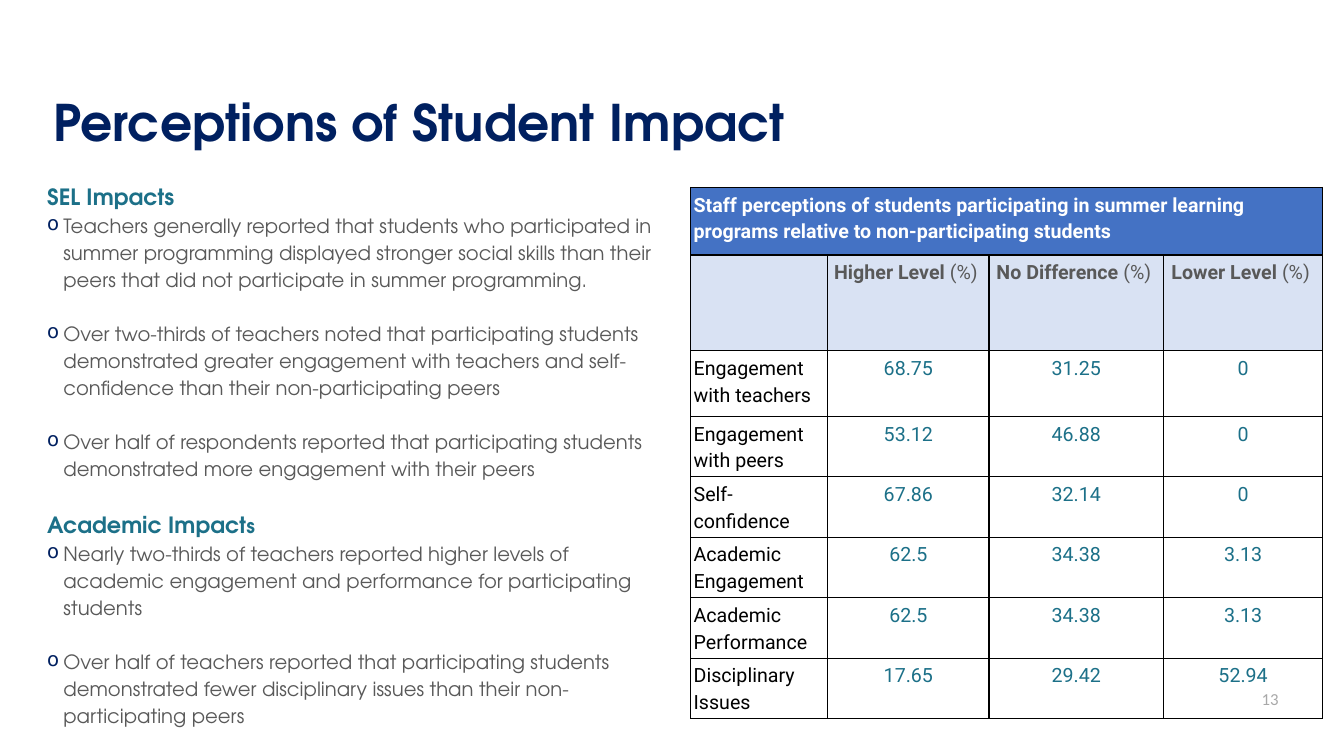
from lxml import etree
from pptx import Presentation
from pptx import util as u
from pptx.dml.color import RGBColor
from pptx.enum import text
from pptx.oxml import ns

NAVY = RGBColor(0x00, 0x20, 0x60)
TEAL = RGBColor(0x1C, 0x70, 0x88)
GREY = RGBColor(0x59, 0x59, 0x59)
PALE_GREY = RGBColor(0xA8, 0xA8, 0xA8)
BLUE = RGBColor(0x44, 0x72, 0xC4)
PALE_BLUE = RGBColor(0xD9, 0xE2, 0xF3)
WHITE = RGBColor(0xFF, 0xFF, 0xFF)
BLACK = RGBColor(0x00, 0x00, 0x00)

HEADING = "TeX Gyre Adventor"
TABLE = "Roboto"
CENTER = text.PP_ALIGN.CENTER

SECTIONS = [
    ([("SEL Impacts", 16)], [
        "Teachers generally reported that students who participated in summer programming "
        "displayed stronger social skills than their peers that did not participate in "
        "summer programming.",
        "Over two-thirds of teachers noted that participating students demonstrated greater "
        "engagement with teachers and self-confidence than their non-participating peers",
        "Over half of respondents reported that participating students demonstrated more "
        "engagement with their peers",
    ]),
    ([("Academic Impact", 16), ("s", 14)], [
        "Nearly two-thirds of teachers reported higher levels of academic engagement and "
        "performance for participating students",
        "Over half of teachers reported that participating students demonstrated fewer "
        "disciplinary issues than their non-participating peers",
    ]),
]

TABLE_TITLE = ("Staff perceptions of students participating in summer learning programs "
               "relative to non-participating students")
LEVELS = ["Higher Level ", "No Difference ", "Lower Level "]
RATINGS = [
    ("Engagement with teachers", "68.75", "31.25", "0"),
    ("Engagement with peers", "53.12", "46.88", "0"),
    ("Self-confidence", "67.86", "32.14", "0"),
    ("Academic Engagement", "62.5", "34.38", "3.13"),
    ("Academic Performance", "62.5", "34.38", "3.13"),
    ("Disciplinary Issues", "17.65", "29.42", "52.94"),
]
COLUMNS = [136, 160, 173, 158]
ROWS = [67, 95, 65] + [60] * 5


def px(n):
    """Turn px, at 100 to the inch, into EMU."""
    return u.Emu(n * 9144)


def sub(parent, tag, **attrs):
    """Append a DrawingML child element."""
    return etree.SubElement(parent, ns.qn(tag), attrs)


class Deck:
    """Holds the presentation, the current slide and its text style."""

    def __init__(self, width, height):
        """Start a deck with one blank slide."""
        self.prs = Presentation()
        self.prs.slide_width, self.prs.slide_height = px(width), px(height)
        self.s = self.prs.slides.add_slide(self.prs.slide_layouts[6])

    def run(self, p, words, size, color, font, bold=False):
        """Add one styled run."""
        r = p.add_run()
        r.text = words
        r.font.size, r.font.name, r.font.bold = u.Pt(size), font, bold
        r.font.color.rgb = color

    def box(self, x, y, w, h):
        """Add a wrapping text box and return its frame."""
        tf = self.s.shapes.add_textbox(px(x), px(y), px(w), px(h)).text_frame
        tf.word_wrap = True
        return tf

    def bullet(self, p):
        """Give a paragraph a hanging round bullet."""
        pPr = p._p.get_or_add_pPr()
        pPr.set("marL", str(px(16)))
        pPr.set("indent", str(px(-16)))
        sub(sub(pPr, "a:buClr"), "a:srgbClr", val=str(NAVY))
        sub(pPr, "a:buChar", char="o")

    def sections(self, tf, sections, gap):
        """Write headings, each followed by spaced bullets."""
        for i, (heading, points) in enumerate(sections):
            p = tf.add_paragraph() if i else tf.paragraphs[0]
            p.line_spacing = 1.15
            if i:
                p.space_before = u.Pt(gap)
            for words, size in heading:
                self.run(p, words, size, TEAL, HEADING, True)
            for j, point in enumerate(points):
                p = tf.add_paragraph()
                self.bullet(p)
                p.line_spacing = 1.15
                p.space_before = u.Pt(gap if j else 0)
                self.run(p, point, 14, GREY, HEADING)

    def table(self, x, y, columns, rows):
        """Add a plain table with thin black borders."""
        table = self.s.shapes.add_table(len(rows), len(columns), px(x), px(y),
                                        px(sum(columns)), px(sum(rows))).table
        table.first_row = table.horz_banding = False
        for column, w in zip(table.columns, columns):
            column.width = px(w)
        for row, h in zip(table.rows, rows):
            row.height = px(h)
        for cell in table.iter_cells():
            tcPr = cell._tc.get_or_add_tcPr()
            for side in "LRTB":
                ln = sub(tcPr, f"a:ln{side}", w=str(u.Pt(1)))
                sub(sub(ln, "a:solidFill"), "a:srgbClr", val=str(BLACK))
            cell.fill.background()
        return table

    def cell(self, cell, runs, color, align=None, fill=None):
        """Fill one cell with (words, bold) runs."""
        cell.margin_left = cell.margin_right = px(3)
        cell.margin_top = cell.margin_bottom = px(3)
        if fill is not None:
            cell.fill.solid()
            cell.fill.fore_color.rgb = fill
        p = cell.text_frame.paragraphs[0]
        p.alignment, p.line_spacing = align, 1.15
        for words, bold in runs:
            self.run(p, words, 14, color, TABLE, bold)


def main():
    """Build and save the slide."""
    deck = Deck(1333, 750)

    tf = deck.box(982, 680, 296, 27)
    tf.vertical_anchor = text.MSO_ANCHOR.MIDDLE
    p = tf.paragraphs[0]
    p.alignment = text.PP_ALIGN.RIGHT
    deck.run(p, "13", 12, PALE_GREY, "Calibri")

    title = deck.box(43, 85, 1224, 79).paragraphs[0]
    deck.run(title, "Perceptions of Student Impact", 36, NAVY, HEADING, True)

    table = deck.table(685, 186, COLUMNS, ROWS)
    table.cell(0, 0).merge(table.cell(0, 3))
    deck.cell(table.cell(0, 0), [(TABLE_TITLE, True)], WHITE, fill=BLUE)
    deck.cell(table.cell(1, 0), [], GREY, fill=PALE_BLUE)
    for c, level in enumerate(LEVELS, 1):
        deck.cell(table.cell(1, c), [(level, True), ("(%) ", False)], GREY, CENTER, PALE_BLUE)
    for r, (label, *values) in enumerate(RATINGS, 2):
        deck.cell(table.cell(r, 0), [(label, False)], BLACK)
        for c, value in enumerate(values, 1):
            deck.cell(table.cell(r, c), [(value, False)], TEAL, CENTER)

    deck.sections(deck.box(37, 173, 631, 507), SECTIONS, 19.3)
    deck.prs.save("out.pptx")


if __name__ == "__main__":
    main()
